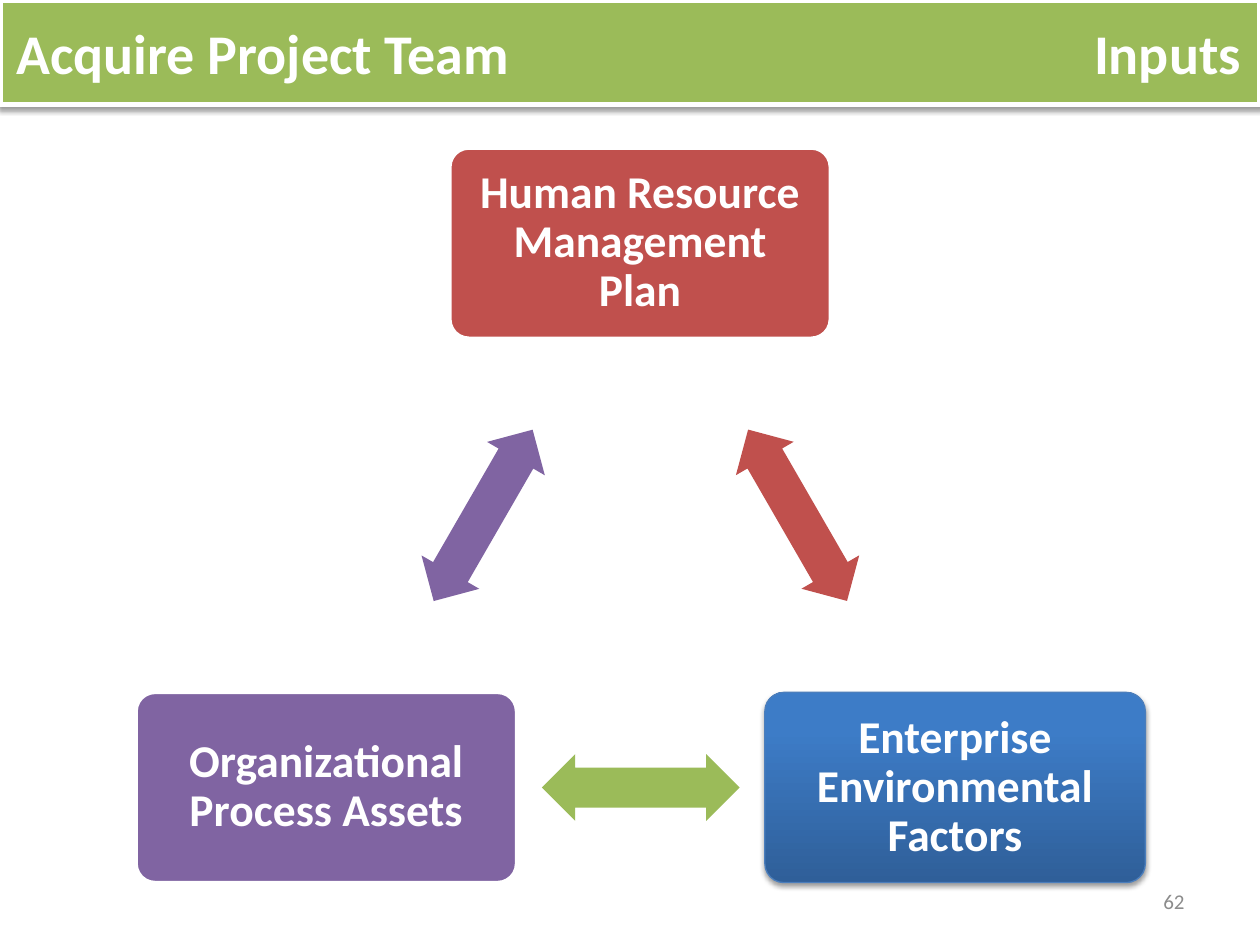
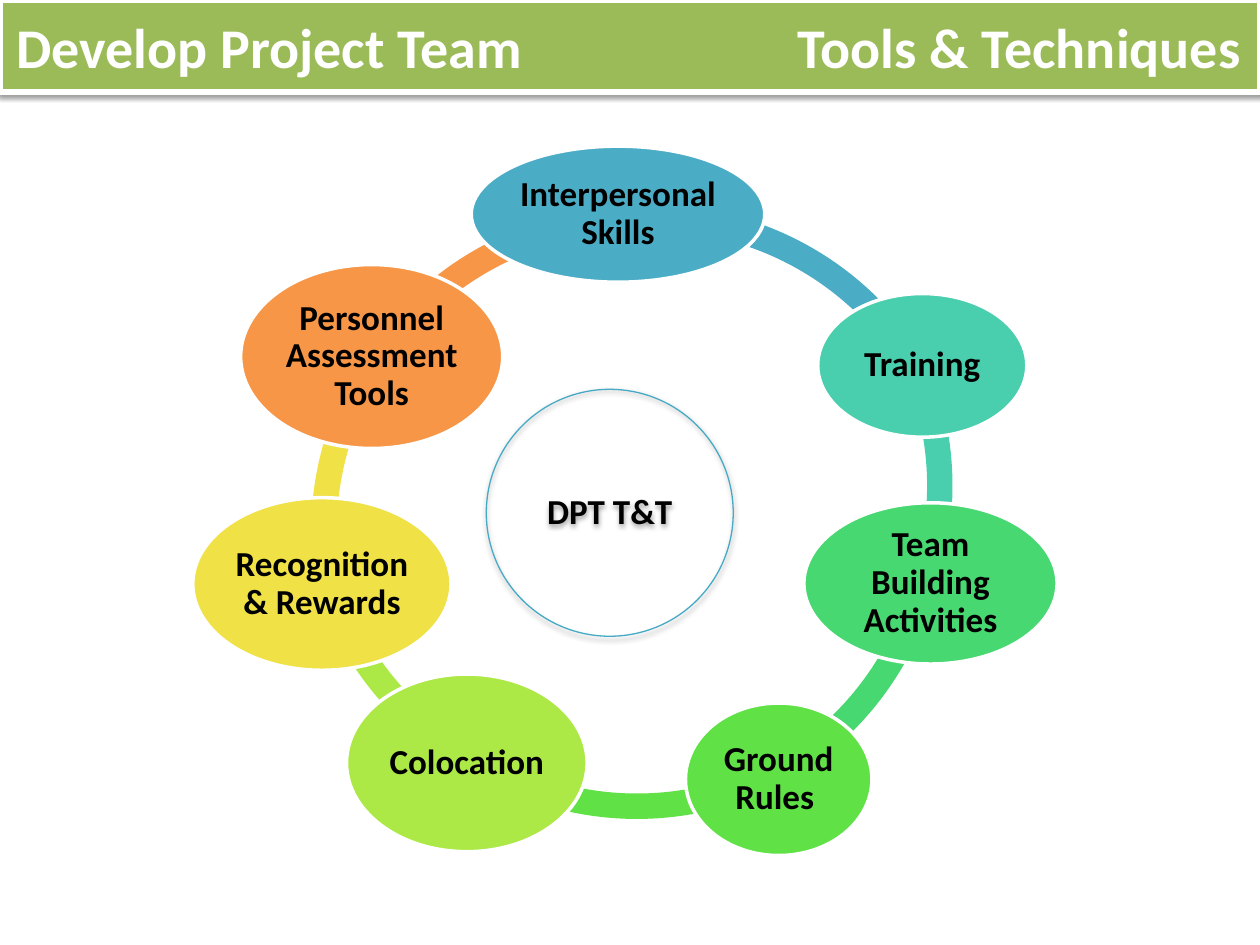
from lxml.etree import SubElement
from pptx import Presentation
from pptx.dml.color import RGBColor
from pptx.enum.shapes import MSO_SHAPE
from pptx.enum.text import MSO_ANCHOR, MSO_AUTO_SIZE, PP_ALIGN
from pptx.oxml.ns import qn
from pptx.util import Inches, Pt

WHITE = RGBColor(0xFF, 0xFF, 0xFF)
BLACK = RGBColor(0, 0, 0)
GRAY = RGBColor(0x8C, 0x8C, 0x8C)
OLIVE = RGBColor(0x9B, 0xBB, 0x59)
RED = RGBColor(0xC0, 0x50, 0x4D)
PURPLE = RGBColor(0x80, 0x64, 0xA2)
NAVY = RGBColor(0x2F, 0x5F, 0x99)
BLUE = RGBColor(0x3D, 0x7C, 0xC7)
EDGE = RGBColor(0x4B, 0x7E, 0xBC)
RIM = RGBColor(0x46, 0xAA, 0xC5)
AQUA = RGBColor(0x4B, 0xAC, 0xC6)
TEAL = RGBColor(0x49, 0xCF, 0xAE)
GREEN = RGBColor(0x47, 0xD8, 0x72)
GRASS = RGBColor(0x60, 0xE1, 0x46)
LIME = RGBColor(0xAC, 0xE9, 0x46)
YELLOW = RGBColor(0xF0, 0xE1, 0x46)
ORANGE = RGBColor(0xF7, 0x96, 0x46)


class Deck:
    font = "Calibri"

    def __init__(self):
        self.prs = Presentation()
        self.prs.slide_width = Inches(10)
        self.prs.slide_height = Inches(7.5)
        self.slide = None

    def page(self, left, right, height):
        """Start a slide whose title band has a left and a right part."""
        self.slide = self.prs.slides.add_slide(self.prs.slide_layouts[5])
        band = self.slide.shapes.title
        self.place(band, (0, 0, 10, height))
        self.paint(band, OLIVE, WHITE, 3)
        self.shade(band)
        self.letter(band, f"{left}\t{right}", 32, WHITE, inset=0.13,
                    align=PP_ALIGN.LEFT, space=1)
        # Right tab stop keeps the second part at the far edge
        props = band.text_frame.paragraphs[0]._p.get_or_add_pPr()
        stops = SubElement(props, qn("a:tabLst"))
        SubElement(stops, qn("a:tab"), pos=str(Inches(9.72)), algn="r")

    def place(self, shape, box):
        for name, value in zip(("left", "top", "width", "height"), box):
            setattr(shape, name, Inches(value))

    def paint(self, shape, fill=None, line=None, width=2):
        shape.shadow.inherit = False
        if fill is None:
            shape.fill.background()
        else:
            shape.fill.solid()
            shape.fill.fore_color.rgb = fill
        if line is None:
            shape.line.fill.background()
        else:
            shape.line.color.rgb = line
            shape.line.width = Pt(width)

    def blend(self, shape, low, high):
        """Fill from low at the bottom to high near the top."""
        shape.fill.gradient()
        shape.fill.gradient_angle = 90
        for stop, place, color in zip(shape.fill.gradient_stops, (0, 0.8), (low, high)):
            stop.position = place
            stop.color.rgb = color

    def shade(self, shape):
        effects = shape._element.spPr.find(qn("a:effectLst"))
        shadow = SubElement(effects, qn("a:outerShdw"), blurRad=str(Pt(3.1)),
                            dist=str(Pt(1.6)), dir="5400000", rotWithShape="0")
        tint = SubElement(shadow, qn("a:srgbClr"), val="000000")
        SubElement(tint, qn("a:alpha"), val="38000")

    def letter(self, shape, text, size, color, inset=0.1, bold=True,
               align=PP_ALIGN.CENTER, space=0.9):
        frame = shape.text_frame
        frame.text = text
        gap = Inches(inset)
        para = frame.paragraphs[0]
        font = para.runs[0].font
        styles = (
            (frame, {"word_wrap": True, "auto_size": MSO_AUTO_SIZE.NONE,
                     "vertical_anchor": MSO_ANCHOR.MIDDLE,
                     "margin_left": gap, "margin_right": gap,
                     "margin_top": gap, "margin_bottom": gap}),
            (para, {"alignment": align, "line_spacing": space}),
            (font, {"name": self.font, "size": Pt(size), "bold": bold}),
        )
        for item, values in styles:
            for name, value in values.items():
                setattr(item, name, value)
        font.color.rgb = color

    def shape(self, kind, box, fill=None, line=None, width=2, adjust=(), turn=0):
        item = self.slide.shapes.add_shape(kind, *map(Inches, box))
        for index, value in enumerate(adjust):
            item.adjustments[index] = value
        item.rotation = turn
        self.paint(item, fill, line, width)
        return item

    def label(self, text, box, size, color, align):
        item = self.slide.shapes.add_textbox(*map(Inches, box))
        self.letter(item, text, size, color, bold=False, align=align, space=1)


def inputs(deck):
    deck.page("Acquire Project Team", "Inputs", 0.83)

    # Boxes on the corners of a triangle: text, fill, centre
    wide, high = 3.02, 1.51
    boxes = (
        ("Human Resource Management Plan", RED, (5.08, 1.93)),
        ("Enterprise Environmental Factors", BLUE, (7.58, 6.25)),
        ("Organizational Process Assets", PURPLE, (2.59, 6.25)),
    )
    for text, fill, (x, y) in boxes:
        box = deck.shape(MSO_SHAPE.ROUNDED_RECTANGLE,
                         (x - wide / 2, y - high / 2, wide, high),
                         fill, WHITE, adjust=(0.1,))
        deck.letter(box, text, 26, WHITE, inset=0.11)
        if fill == BLUE:
            deck.blend(box, NAVY, BLUE)
            deck.shade(box)
            box.line.color.rgb = EDGE
            box.line.width = Pt(0.75)

    # Arrows halfway between neighbouring boxes
    long, thick = 1.57, 0.53
    for index, fill in enumerate((RED, OLIVE, PURPLE)):
        (x1, y1), (x2, y2) = boxes[index][2], boxes[(index + 1) % 3][2]
        spot = ((x1 + x2 - long) / 2, (y1 + y2 - thick) / 2, long, thick)
        deck.shape(MSO_SHAPE.LEFT_RIGHT_ARROW, spot, fill,
                   adjust=(0.6, 0.5), turn=60 + 120 * index)

    # Page number
    deck.label("62", (7.17, 6.95, 2.33, 0.4), 12, GRAY, PP_ALIGN.RIGHT)


def tools(deck):
    deck.page("Develop Project Team", "Tools & Techniques", 0.73)

    # Each stage: text, fill, oval box, arc corner, arc start and end
    stages = (
        ("Interpersonal Skills", AQUA, (3.74, 1.16, 2.33, 1.08),
         (2.66, 1.63), (158.08, 197.74)),
        ("Training", TEAL, (6.49, 2.33, 1.66, 1.14),
         (2.51, 1.33), (202.51, 11.02)),
        ("Team Building Activities", GREEN, (6.38, 3.99, 2.01, 1.28),
         (2.46, 1.49), (8.66, 36.7)),
        ("Ground Rules ", GRASS, (5.44, 5.58, 1.48, 1.21),
         (2.53, 1.45), (37.82, 73.74)),
        ("Colocation", LIME, (2.75, 5.35, 1.91, 1.41),
         (2.39, 1.37), (71.52, 97.6)),
        ("Recognition & Rewards", YELLOW, (1.53, 3.95, 2.05, 1.37),
         (2.47, 1.69), (102.25, 128.55)),
        ("Personnel Assessment Tools", ORANGE, (1.91, 2.1, 2.08, 1.46),
         (2.5, 1.65), (127.75, 160.27)),
    )

    # Ring of arcs, last stage at the back
    for _, fill, _, corner, angles in reversed(stages):
        deck.shape(MSO_SHAPE.BLOCK_ARC, (*corner, 5.05, 5.05), fill,
                   adjust=(*angles, 0.04))

    # Hub
    hub = deck.shape(MSO_SHAPE.OVAL, (3.86, 3.09, 1.96, 1.96), line=RIM, width=0.75)
    deck.shade(hub)
    deck.letter(hub, "DPT T&T", 20, BLACK, inset=0.03)

    # Stage ovals
    for text, fill, box, _, _ in stages:
        oval = deck.shape(MSO_SHAPE.OVAL, box, fill, WHITE)
        deck.letter(oval, text, 20, BLACK, inset=0.03)


def main():
    deck = Deck()
    inputs(deck)
    tools(deck)
    deck.prs.save("out.pptx")


if __name__ == "__main__":
    main()
